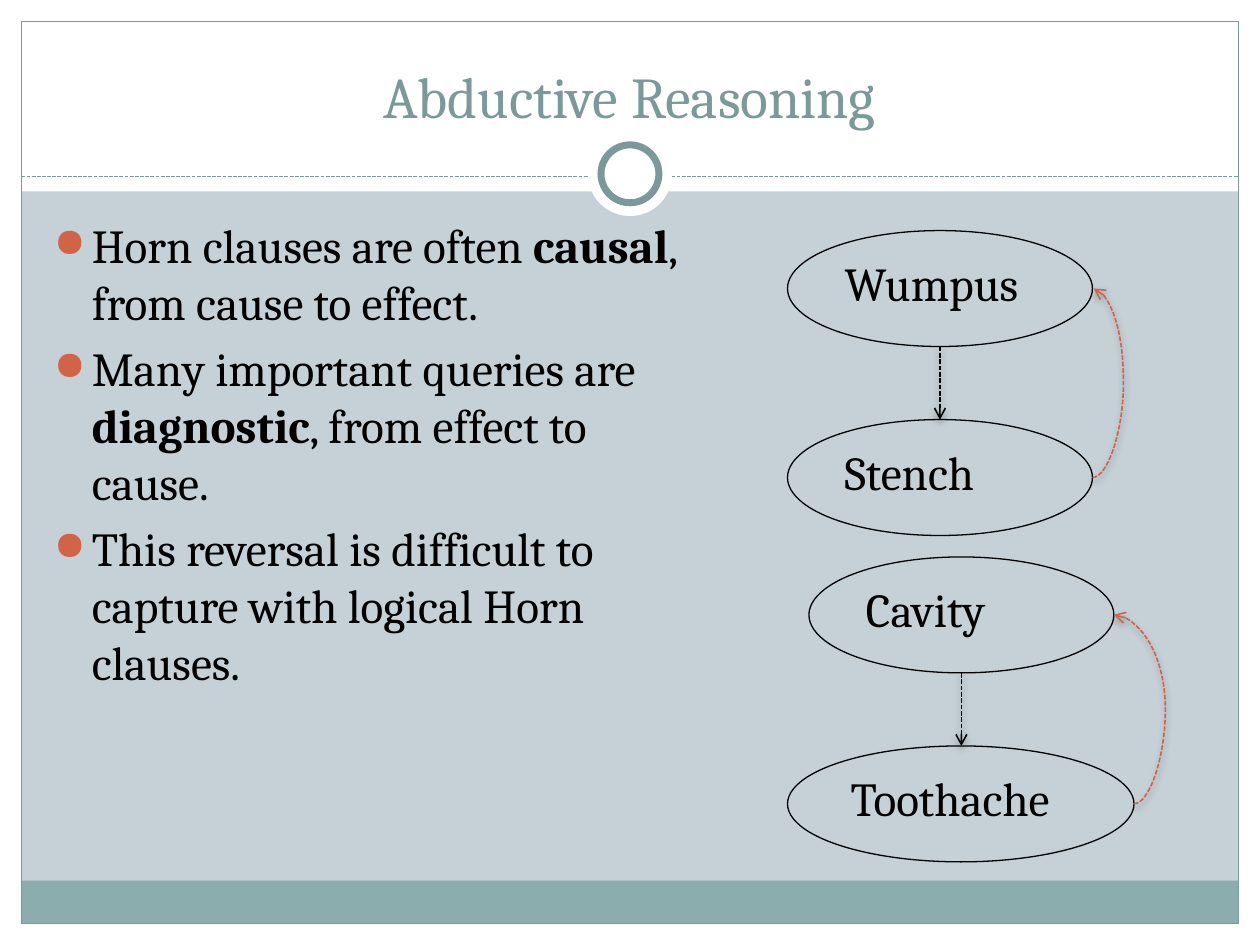
from lxml import etree
from pptx import Presentation
from pptx.dml.color import RGBColor
from pptx.enum.dml import MSO_LINE
from pptx.enum.shapes import MSO_CONNECTOR, MSO_SHAPE
from pptx.enum.text import MSO_ANCHOR, PP_ALIGN
from pptx.oxml import parse_xml
from pptx.oxml.ns import nsdecls, qn
from pptx.util import Inches, Pt

RECTANGLE, OVAL = MSO_SHAPE.RECTANGLE, MSO_SHAPE.OVAL
STRAIGHT, CURVE = MSO_CONNECTOR.STRAIGHT, MSO_CONNECTOR.CURVE
DASH = MSO_LINE.SQUARE_DOT
TOP, BOTTOM = MSO_ANCHOR.TOP, MSO_ANCHOR.BOTTOM
LEFT, CENTER = PP_ALIGN.LEFT, PP_ALIGN.CENTER

COLORS = {"background": "C5D1D7", "white": "FFFFFF", "band": "8CADAE",
          "frame": "7C999A", "accent": "D16349", "text": "000000"}
FONT = "Cambria"
WIDTH, HEIGHT, MARGIN = 10, 7.5, 0.17
NODE_HEIGHT, NODE_STEP, CURVE_BULGE = 0.92, 1.5, 0.25

BULLETS = [
    [("Horn clauses are often ", False), ("causal", True),
     (", from cause to effect.", False)],
    [("Many important queries are ", False), ("diagnostic", True),
     (", from effect to cause.", False)],
    [("This reversal is difficult to capture with logical Horn clauses.", False)],
]


def color(name):
    return RGBColor.from_string(COLORS[name])


def inches(box):
    return [Inches(length) for length in box]


def add_shape(slide, kind, box, fill=None, line=None, weight=0.75):
    shape = slide.shapes.add_shape(kind, *inches(box))
    shape.shadow.inherit = False
    if fill:
        shape.fill.solid()
        shape.fill.fore_color.rgb = color(fill)
    else:
        shape.fill.background()
    if line:
        shape.line.color.rgb = color(line)
        shape.line.width = Pt(weight)
    else:
        shape.line.fill.background()
    return shape


def add_dashed_line(slide, kind, start, end, line, weight):
    connector = slide.shapes.add_connector(kind, *inches(start + end))
    connector.line.color.rgb = color(line)
    connector.line.width = Pt(weight)
    connector.line.dash_style = DASH
    effects = etree.SubElement(connector._element.spPr, qn("a:effectLst"))
    return connector, effects


def add_arrow(slide, kind, start, end, line):
    """Draw a dashed arrow with a soft shadow below it."""
    connector, effects = add_dashed_line(slide, kind, start, end, line, 0.9)
    etree.SubElement(connector.line._get_or_add_ln(), qn("a:tailEnd"), type="arrow")
    effects.append(parse_xml(
        f'<a:outerShdw {nsdecls("a")} blurRad="{Pt(4)}" dist="{Pt(2)}" dir="5400000" '
        'rotWithShape="0"><a:srgbClr val="000000"><a:alpha val="35000"/>'
        '</a:srgbClr></a:outerShdw>'))
    return connector


def format_frame(frame, anchor):
    frame.word_wrap = True
    frame.vertical_anchor = anchor


def add_run(paragraph, text, size, name, bold=False):
    run = paragraph.add_run()
    run.text = text
    for attribute, value in {"name": FONT, "size": Pt(size), "bold": bold}.items():
        setattr(run.font, attribute, value)
    run.font.color.rgb = color(name)


def add_bullet(paragraph):
    properties = paragraph._p.get_or_add_pPr()
    properties.set("marL", str(Inches(0.3)))
    properties.set("indent", str(-Inches(0.3)))
    bullet_color = etree.SubElement(properties, qn("a:buClr"))
    etree.SubElement(bullet_color, qn("a:srgbClr"), val=COLORS["accent"])
    etree.SubElement(properties, qn("a:buSzPct"), val="85000")
    etree.SubElement(properties, qn("a:buChar"), char="●")


def add_backdrop(slide):
    """Draw the white margins, header, footer band, frame and ring."""
    slide.background.fill.solid()
    slide.background.fill.fore_color.rgb = color("background")
    inner_width, inner_height = WIDTH - 2 * MARGIN, HEIGHT - 2 * MARGIN
    for box in [(0, HEIGHT - MARGIN, WIDTH, MARGIN), (0, 0, WIDTH, 1.52),
                (0, 0, MARGIN, HEIGHT), (WIDTH - MARGIN, 0, MARGIN, HEIGHT)]:
        add_shape(slide, RECTANGLE, box, fill="white")
    add_shape(slide, RECTANGLE, (MARGIN, 6.99, inner_width, 0.34), fill="band")
    add_shape(slide, RECTANGLE, (MARGIN, MARGIN, inner_width, inner_height), line="frame")
    add_dashed_line(slide, STRAIGHT, (MARGIN, 1.4), (WIDTH - MARGIN, 1.4), "frame", 0.75)
    for diameter, line in [(0.67, None), (0.46, "frame")]:
        box = ((WIDTH - diameter) / 2, 1.38 - diameter / 2, diameter, diameter)
        add_shape(slide, OVAL, box, fill="white", line=line, weight=4)


def add_title(slide, box, text):
    frame = slide.shapes.add_textbox(*inches(box)).text_frame
    format_frame(frame, BOTTOM)
    frame.paragraphs[0].alignment = CENTER
    add_run(frame.paragraphs[0], text, 33, "frame")


def add_bullets(slide, box, bullets):
    frame = slide.shapes.add_textbox(*inches(box)).text_frame
    format_frame(frame, TOP)
    for index, runs in enumerate(bullets):
        paragraph = frame.add_paragraph() if index else frame.paragraphs[0]
        paragraph.space_before = Pt(5.4)
        add_bullet(paragraph)
        for text, bold in runs:
            add_run(paragraph, text, 27, "text", bold)


def add_node(slide, left, top, width, text):
    box = (left, top, width, NODE_HEIGHT)
    frame = add_shape(slide, OVAL, box, line="text").text_frame
    format_frame(frame, TOP)
    paragraph = frame.paragraphs[0]
    paragraph.alignment = LEFT
    paragraph.space_before = Pt(5.4)
    add_run(paragraph, text, 27, "text")


def add_causal_pair(slide, top, cause, effect):
    """Draw cause above effect, an arrow down and a curved arrow back.

    Cause and effect are (text, left, width).
    """
    tops = (top, top + NODE_STEP)
    for (text, left, width), node_top in zip((cause, effect), tops):
        add_node(slide, left, node_top, width, text)
    center = cause[1] + cause[2] / 2
    add_arrow(slide, STRAIGHT, (center, top + NODE_HEIGHT), (center, tops[1]), "text")

    cause_right, effect_right = cause[1] + cause[2], effect[1] + effect[2]
    # The bulge is a share of the connector's width, which must not be zero.
    span = round(cause_right - effect_right, 2) or 0.01
    middle = NODE_HEIGHT / 2
    curve = add_arrow(slide, CURVE, (effect_right, tops[1] + middle),
                      (effect_right + span, top + middle), "accent")
    guides = curve._element.spPr.find(qn("a:prstGeom")).get_or_add_avLst()
    etree.SubElement(guides, qn("a:gd"), name="adj1",
                     fmla=f"val {round(CURVE_BULGE / span * 100000)}")


def main():
    presentation = Presentation()
    presentation.slide_width, presentation.slide_height = Inches(WIDTH), Inches(HEIGHT)
    slide = presentation.slides.add_slide(presentation.slide_layouts[6])
    add_backdrop(slide)
    add_title(slide, (0.33, 0.25, 9.33, 0.83), "Abductive Reasoning")
    add_bullets(slide, (0.33, 1.67, 5.25, 5), BULLETS)
    add_causal_pair(slide, 1.83, ("Wumpus", 6.25, 2.42), ("Stench", 6.25, 2.42))
    add_causal_pair(slide, 4.42, ("Cavity", 6.42, 2.42), ("Toothache", 6.25, 2.75))
    presentation.save("out.pptx")


if __name__ == "__main__":
    main()
